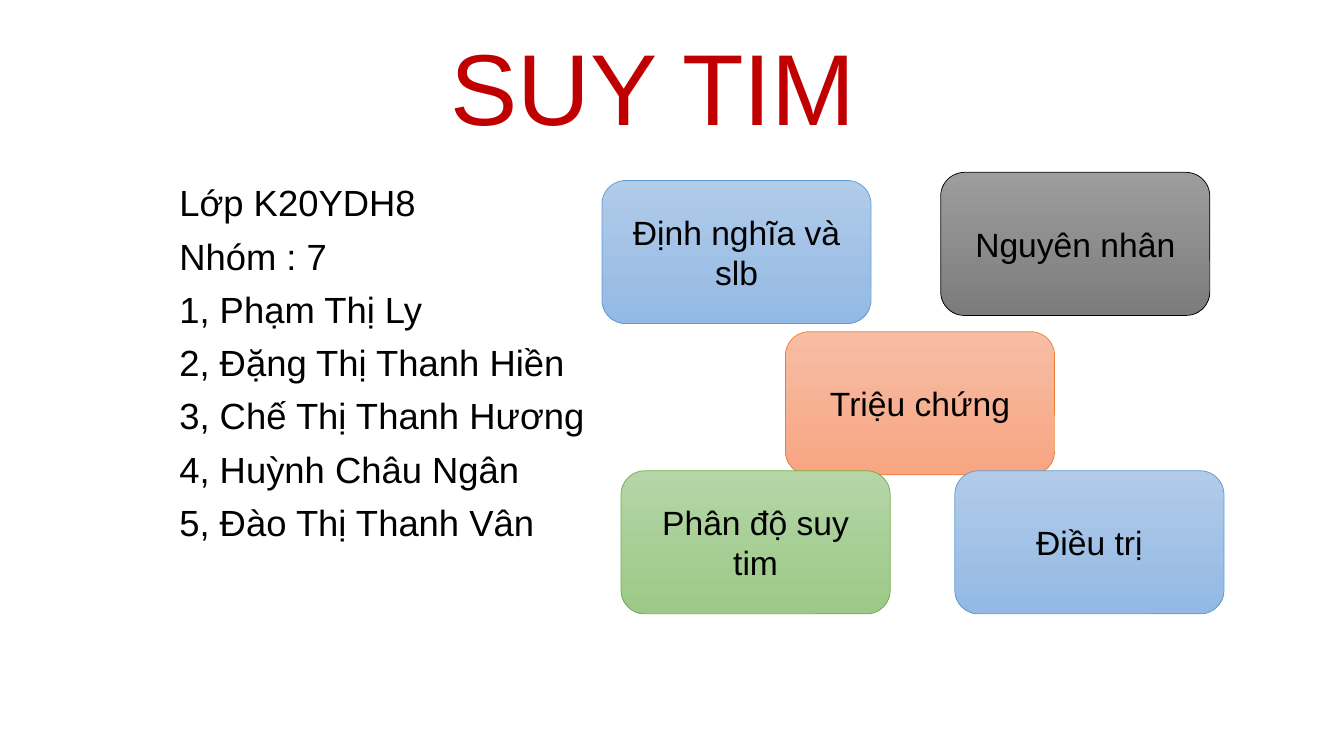
import pptx
import pptx.dml.color
import pptx.enum.shapes
import pptx.enum.text
import pptx.util

Inches = pptx.util.Inches
Pt = pptx.util.Pt
ALIGN = pptx.enum.text.PP_ALIGN
ANCHOR = pptx.enum.text.MSO_ANCHOR

TITLE = "SUY TIM"
TITLE_BOX = (1.98, 0.17, 9, 1.34)
GROUP_LINES = [
    "Lớp K20YDH8",
    "Nhóm : 7",
    "1, Phạm Thị Ly",
    "2, Đặng Thị Thanh Hiền",
    "3, Chế Thị Thanh Hương",
    "4, Huỳnh Châu Ngân",
    "5, Đào Thị Thanh Vân",
]
GROUP_BOX = (1.68, 1.79, 4.82, 5.04)
TOPIC_SIZE = (2.67, 1.42)
# Label, left, top, palette
TOPICS = [
    ("Định nghĩa và slb", 5.97, 1.79, "blue"),
    ("Triệu chứng", 7.79, 3.29, "orange"),
    ("Phân độ suy tim", 6.16, 4.67, "green"),
    ("Nguyên nhân", 9.33, 1.71, "grey"),
    ("Điều trị", 9.47, 4.67, "blue"),
]
THEME = {
    "font": "Arial",
    "title": {"size": 72, "color": "C00000"},
    "group": {"size": 26, "color": "000000"},
    "topic": {"size": 24, "color": "000000"},
    # Gradient top, gradient bottom, outline
    "palettes": {
        "blue": ("B1CBE9", "93B9E4", "5B9BD5"),
        "orange": ("F7BDA5", "F8A582", "ED7D31"),
        "green": ("B5D5A7", "9CC987", "70AD47"),
        "grey": ("9D9D9D", "7C7C7C", "000000"),
    },
}


def rgb(value):
    return pptx.dml.color.RGBColor.from_string(value)


def write_text(shape, lines, style, anchor, **paragraph_format):
    """Fill the shape with one paragraph per line, all in one theme style."""
    frame = shape.text_frame
    frame.text = "\n".join(lines)
    frame.word_wrap = True
    frame.auto_size = pptx.enum.text.MSO_AUTO_SIZE.NONE
    frame.vertical_anchor = anchor
    for paragraph in frame.paragraphs:
        for name, value in paragraph_format.items():
            setattr(paragraph, name, value)
        font = paragraph.runs[0].font
        font.name = THEME["font"]
        font.size = Pt(THEME[style]["size"])
        font.color.rgb = rgb(THEME[style]["color"])


def add_title(slide):
    title = slide.shapes.title
    for name, value in zip(("left", "top", "width", "height"), TITLE_BOX):
        setattr(title, name, Inches(value))
    write_text(title, [TITLE], "title", ANCHOR.BOTTOM,
               alignment=ALIGN.CENTER, line_spacing=0.9)


def add_group(slide):
    box = slide.shapes.add_textbox(*map(Inches, GROUP_BOX))
    write_text(box, GROUP_LINES, "group", ANCHOR.TOP,
               alignment=ALIGN.LEFT, line_spacing=0.9, space_before=Pt(10))


def add_topic(slide, label, left, top, palette):
    shape = slide.shapes.add_shape(
        pptx.enum.shapes.MSO_SHAPE.ROUNDED_RECTANGLE,
        *map(Inches, (left, top, *TOPIC_SIZE)))
    shape.shadow.inherit = False
    *gradient, outline = THEME["palettes"][palette]
    shape.fill.gradient()
    shape.fill.gradient_angle = 270
    for position, (stop, color) in enumerate(zip(shape.fill.gradient_stops, gradient)):
        stop.position = position
        stop.color.rgb = rgb(color)
    shape.line.color.rgb = rgb(outline)
    shape.line.width = Pt(0.5)
    write_text(shape, [label], "topic", ANCHOR.MIDDLE, alignment=ALIGN.CENTER)


def main():
    presentation = pptx.Presentation()
    presentation.slide_width = Inches(13.33)
    presentation.slide_height = Inches(7.5)
    slide = presentation.slides.add_slide(presentation.slide_layouts.get_by_name("Title Only"))
    add_title(slide)
    add_group(slide)
    for topic in TOPICS:
        add_topic(slide, *topic)
    presentation.save("out.pptx")


if __name__ == "__main__":
    main()
